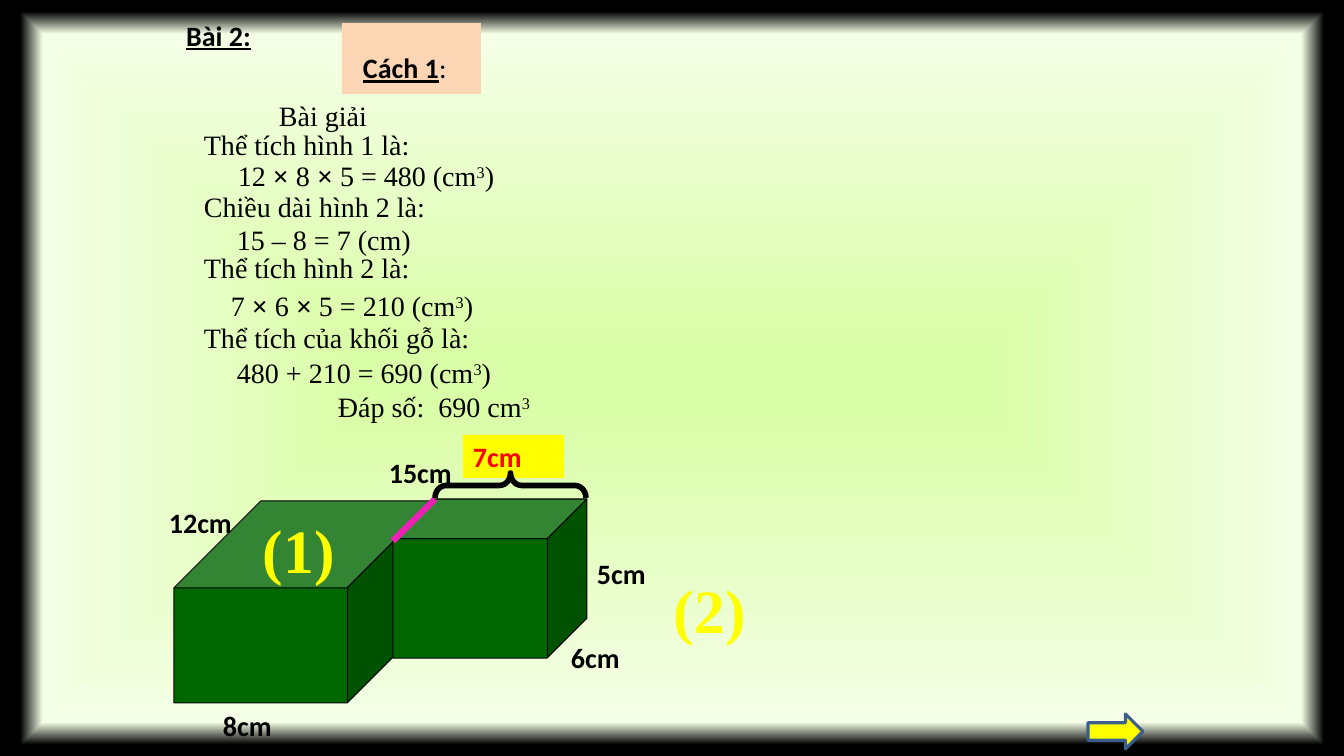
from itertools import groupby

from pptx import Presentation
from pptx.dml.color import RGBColor
from pptx.enum.shapes import MSO_CONNECTOR, MSO_SHAPE
from pptx.enum.text import MSO_ANCHOR, MSO_AUTO_SIZE, PP_ALIGN
from pptx.oxml import parse_xml
from pptx.oxml.ns import nsdecls, qn
from pptx.util import Pt

PX = 914400 / 100.8
STRAIGHT = MSO_CONNECTOR.STRAIGHT
CUBE, RECT = MSO_SHAPE.CUBE, MSO_SHAPE.RECTANGLE
BRACE, ARROW = MSO_SHAPE.LEFT_BRACE, MSO_SHAPE.RIGHT_ARROW
TOP, BOTTOM = MSO_ANCHOR.TOP, MSO_ANCHOR.BOTTOM
LEFT = PP_ALIGN.LEFT
NO_AUTOFIT = MSO_AUTO_SIZE.NONE
SANS, SERIF = "Calibri", "Times New Roman"
LINE_HEIGHT = 43
SOLUTION_WIDTH = 330
COLORS = {
    "black": "000000", "glow": "DAFDA7", "mist": "F5FFE7", "wood": "006600",
    "yellow": "FFFF00", "red": "FF0000", "pink": "EC20B7", "peach": "FCD5B5",
    "navy": "3A5F8C",
}
BACKDROP = [(0, "glow"), (8, "glow"), (91, "mist"), (97, "black"), (100, "black")]
SOLUTION = [
    (75, 0, "Bài giải"),
    (0, 29, "Thể tích hình 1 là:"),
    (34, 60, "12 × 8 × 5 = 480 (cm^3^)"),
    (0, 91, "Chiều dài hình 2 là:"),
    (33, 124, "15 – 8 = 7 (cm)"),
    (0, 152, "Thể tích hình 2 là:"),
    (27, 190, "7 × 6 × 5 = 210 (cm^3^)"),
    (0, 222, "Thể tích của khối gỗ là:"),
    (33, 257, "480 + 210 = 690 (cm^3^)"),
    (134, 291, "Đáp số:  690 cm^3^"),
]
DIMENSIONS = [
    (220, 16, "15cm"), (0, 66, "12cm"), (54, 269, "8cm"),
    (402, 201, "6cm"), (428, 117, "5cm"),
]
BLOCKS = [(15, 66, 260, 202, 0.43), (234, 64, 194, 159, 0.25)]
BLOCK_NUMBERS = [(94, 72, "(1)"), (505, 132, "(2)")]


def emu(*lengths):
    return [round(length * PX) for length in lengths]


def rgb(name):
    return RGBColor.from_string(COLORS[name])


def add_run(paragraph, text, font=SANS, size=20, color="black", bold=False,
            underline=False, raised=False):
    run = paragraph.add_run()
    run.text = text
    run.font.name = font
    run.font.size = Pt(size)
    run.font.bold = bold
    run.font.underline = underline
    run.font.color.rgb = rgb(color)
    if raised:
        run.font._element.set("baseline", "30000")


def prepare_text(shape, anchor=TOP):
    frame = shape.text_frame
    frame.word_wrap = True
    frame.auto_size = NO_AUTOFIT
    frame.vertical_anchor = anchor
    frame.paragraphs[0].alignment = LEFT
    return frame.paragraphs[0]


def add_label(slide, box, text, **style):
    label = slide.shapes.add_textbox(*emu(*box))
    add_run(prepare_text(label), text, **style)


def add_solid(slide, preset, box, fill=None, line=None, width=1):
    solid = slide.shapes.add_shape(preset, *emu(*box))
    solid.shadow.inherit = False
    if fill:
        solid.fill.solid()
        solid.fill.fore_color.rgb = rgb(fill)
    else:
        solid.fill.background()
    if line:
        solid.line.color.rgb = rgb(line)
        solid.line.width = Pt(width)
    else:
        solid.line.fill.background()
    return solid


def paint_background(slide):
    stops = "".join(
        f'<a:gs pos="{pos * 1000}"><a:srgbClr val="{COLORS[name]}"/></a:gs>'
        for pos, name in BACKDROP)
    backdrop = parse_xml(
        f'<p:bg {nsdecls("p", "a")}><p:bgPr><a:gradFill rotWithShape="1">'
        f'<a:gsLst>{stops}</a:gsLst><a:path path="shape">'
        '<a:fillToRect l="50000" t="50000" r="50000" b="50000"/></a:path>'
        '</a:gradFill><a:effectLst/></p:bgPr></p:bg>')
    slide._element.cSld.insert(0, backdrop)


def add_heading(slide, left, top):
    title = slide.shapes.title
    title.left, title.top, title.width, title.height = emu(left, top, 176, LINE_HEIGHT)
    add_run(prepare_text(title), "Bài 2:", bold=True, underline=True)

    method = add_solid(slide, RECT, (left + 166, top + 10, 139, 71), "peach")
    method_line = prepare_text(method, BOTTOM)
    method.text_frame.margin_left, method.text_frame.margin_bottom = emu(21, 10)
    add_run(method_line, "Cách 1", bold=True, underline=True)
    add_run(method_line, ":")


def add_solution(slide, left, top):
    for dx, dy, sentence in SOLUTION:
        box = slide.shapes.add_textbox(
            *emu(left + dx, top + dy, SOLUTION_WIDTH, LINE_HEIGHT))
        paragraph = prepare_text(box)
        for index, part in enumerate(sentence.split("^")):
            for is_times, letters in groupby(part, lambda letter: letter == "×"):
                add_run(paragraph, "".join(letters), SERIF, bold=is_times,
                        raised=index % 2 == 1)


def add_wood_block(slide, left, top):
    for dx, dy, width, height, depth in BLOCKS:
        cube = add_solid(slide, CUBE, (left + dx, top + dy, width, height),
                         "wood", "black", 0.75)
        cube.adjustments[0] = depth
    for dx, dy, text in DIMENSIONS:
        add_label(slide, (left + dx, top + dy, 100, LINE_HEIGHT), text, bold=True)

    remainder = add_solid(slide, RECT, (left + 304, top, 101, LINE_HEIGHT), "yellow")
    add_run(prepare_text(remainder), "7cm", color="red", bold=True)

    seam = slide.shapes.add_connector(
        STRAIGHT, *emu(left + 234, top + 106, left + 276, top + 64))
    seam.line.color.rgb = rgb("pink")
    seam.line.width = Pt(4.5)
    seam._element.spPr.append(seam._element.makeelement(qn("a:effectLst"), {}))

    brace = add_solid(slide, BRACE, (left + 339, top - 25, 25, 151), None, "black", 4)
    brace.rotation = 90
    brace.adjustments[0] = 0.44
    brace.adjustments[1] = 0.5

    for dx, dy, number in BLOCK_NUMBERS:
        add_label(slide, (left + dx, top + dy, 101, 84), number,
                  font=SERIF, size=44, color="yellow", bold=True)


def main():
    deck = Presentation()
    deck.slide_width, deck.slide_height = emu(1344, 756)
    slide = deck.slides.add_slide(deck.slide_layouts[5])
    paint_background(slide)
    add_heading(slide, 176, 13)
    add_solution(slide, 194, 94)
    add_wood_block(slide, 159, 435)
    add_solid(slide, ARROW, (1088, 714, 55, 35), "yellow", "navy", 2.25)
    deck.save("out.pptx")


if __name__ == "__main__":
    main()
